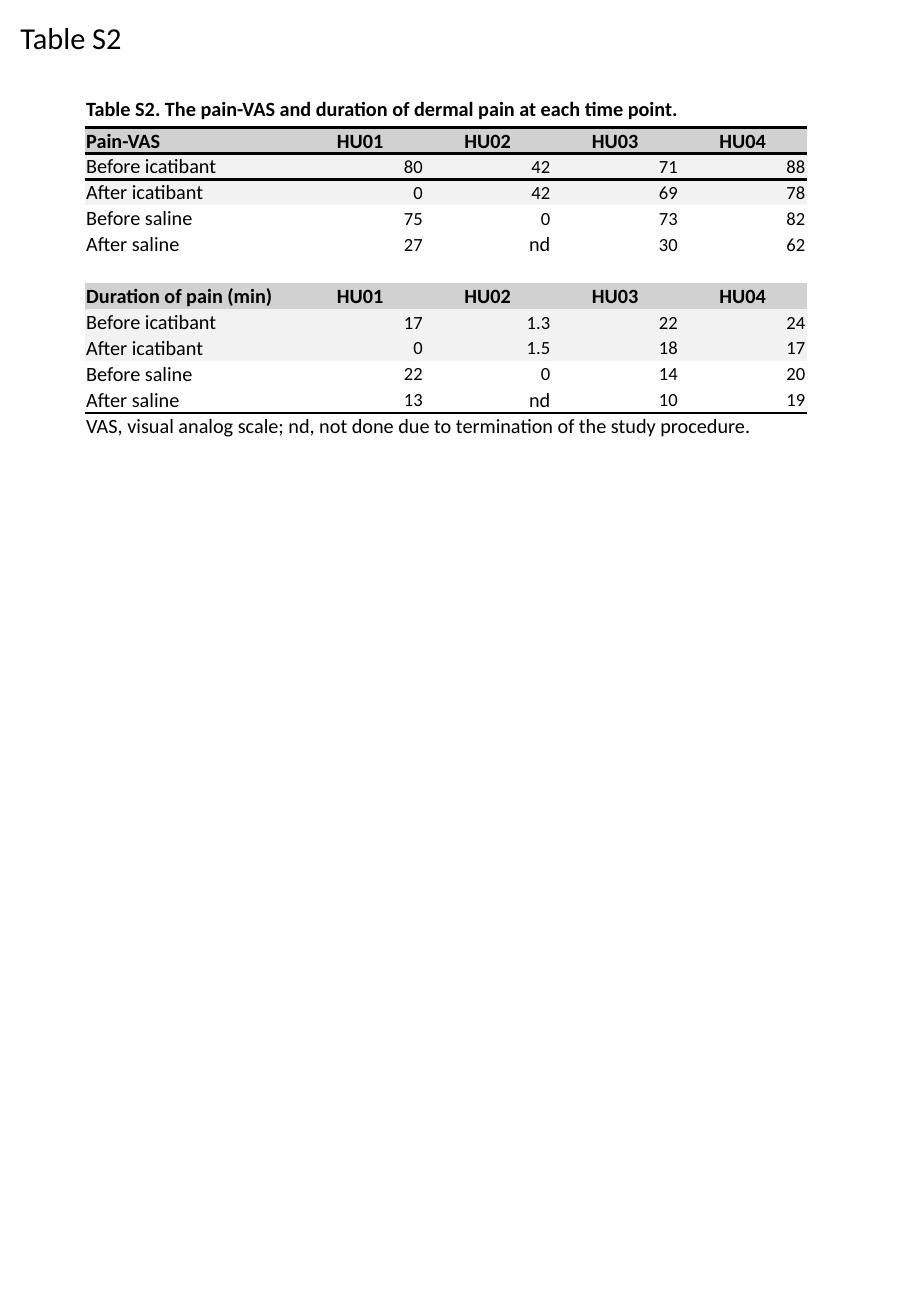
import lxml.etree
import pptx
import pptx.dml.color
import pptx.enum.text
import pptx.oxml.ns
import pptx.util

ALIGN = pptx.enum.text.PP_ALIGN
PLAIN = "{2D5ABB26-0587-4C30-8999-92F81FD0307C}"
HEADS = ["HU01", "HU02", "HU03", "HU04"]
STEPS = ["Before icatibant", "After icatibant", "Before saline", "After saline"]
BLOCKS = {
    "Pain-VAS": ["80 42 71 88", "0 42 69 78", "75 0 73 82", "27 nd 30 62"],
    "Duration of pain (min)": ["17 1.3 22 24", "0 1.5 18 17", "22 0 14 20", "13 nd 10 19"],
}
TITLE = "Table S2. The pain-VAS and duration of dermal pain at each time point."
NOTE = "VAS, visual analog scale; nd, not done due to termination of the study procedure."


def color(text):
    return pptx.dml.color.RGBColor.from_string(text)


def write(frame, text, size=12, bold=False, align=ALIGN.LEFT, ink="000000", face="Calibri"):
    line = frame.paragraphs[0]
    line.alignment = align
    if not text:
        end = lxml.etree.SubElement(line._p, pptx.oxml.ns.qn("a:endParaRPr"))
        end.set("sz", str(size * 100))
        return
    run = line.add_run()
    run.text = text
    run.font.size = pptx.util.Pt(size)
    run.font.bold = bold
    run.font.name = face
    run.font.color.rgb = color(ink)


class Sheet:
    """Slide with a grid of 75 columns by 108.3 rows and its table style."""

    head, band, rule = "D1D1D1", "F2F2F2", "000000"

    def __init__(self, deck):
        self.slide = deck.slides.add_slide(deck.slide_layouts[6])
        self.wide, self.tall = deck.slide_width / 75, deck.slide_height / 108.3

    def cols(self, count):
        return round(count * self.wide)

    def rows(self, count):
        return round(count * self.tall)

    def place(self, left, top, width, height):
        return self.cols(left), self.rows(top), self.cols(width), self.rows(height)

    def label(self, text, box, **style):
        frame = self.slide.shapes.add_textbox(*self.place(*box)).text_frame
        frame.word_wrap = False
        write(frame, text, **style)

    def table(self, left, top, widths, heights):
        box = self.place(left, top, sum(widths), sum(heights))
        grid = self.slide.shapes.add_table(len(heights), len(widths), *box).table
        grid.first_row = grid.horz_banding = False
        grid._tbl.tblPr.find(pptx.oxml.ns.qn("a:tableStyleId")).text = PLAIN
        for col, width in zip(grid.columns, widths):
            col.width = self.cols(width)
        for row, height in zip(grid.rows, heights):
            row.height = self.rows(height)
        return grid

    def cell(self, cell, text, fill=None, **style):
        cell.margin_left = cell.margin_right = self.cols(0.1)
        cell.margin_top, cell.margin_bottom = self.rows(0.1), 0
        cell.vertical_anchor = pptx.enum.text.MSO_ANCHOR.MIDDLE
        if fill:
            cell.fill.solid()
            cell.fill.fore_color.rgb = color(fill)
        else:
            cell.fill.background()
        write(cell.text_frame, text, **style)

    def edge(self, grid, row, width):
        for upper, lower in zip(grid.rows[row].cells, grid.rows[row + 1].cells):
            for cell, side in ((upper, "lnB"), (lower, "lnT")):
                line = lxml.etree.Element(pptx.oxml.ns.qn(f"a:{side}"), w=str(pptx.util.Pt(width)))
                fill = lxml.etree.SubElement(line, pptx.oxml.ns.qn("a:solidFill"))
                lxml.etree.SubElement(fill, pptx.oxml.ns.qn("a:srgbClr"), val=self.rule)
                props = cell._tc.get_or_add_tcPr()
                spot = 1 if side == "lnB" and props.find(pptx.oxml.ns.qn("a:lnT")) is not None else 0
                props.insert(spot, line)

    def block(self, grid, top, name, data):
        for col, text in enumerate([name] + HEADS):
            align = ALIGN.CENTER if col else ALIGN.LEFT
            self.cell(grid.cell(top, col), text, self.head, bold=True, align=align)
        for row, (step, line) in enumerate(zip(STEPS, data)):
            fill = self.band if "icatibant" in step else None
            self.cell(grid.cell(top + row + 1, 0), step, fill)
            for col, text in enumerate(line.split(), 1):
                size = 12 if text == "nd" else 11
                self.cell(grid.cell(top + row + 1, col), text, fill, size=size, align=ALIGN.RIGHT)

    def span(self, grid, row, text="", **style):
        for col, cell in enumerate(grid.rows[row].cells):
            self.cell(cell, "" if col else text, **style)
        if text:
            grid.cell(row, 0).merge(grid.cell(row, len(grid.columns) - 1))


def main():
    deck = pptx.Presentation()
    deck.slide_width, deck.slide_height = pptx.util.Inches(7.5), pptx.util.Inches(10.83)
    sheet = Sheet(deck)
    grid = sheet.table(7, 7.4, [17.4] + [10.5] * 4, [3.1] + [2.13] * 12)
    sheet.span(grid, 0, TITLE, bold=True)
    for top, (name, data) in zip((1, 7), BLOCKS.items()):
        sheet.block(grid, top, name, data)
    sheet.span(grid, 6)
    sheet.span(grid, 12, NOTE)
    for row, width in ((0, 1.5), (1, 1.5), (11, 1)):
        sheet.edge(grid, row, width)
    sheet.label("Table S2", (0.7, 1.1, 10.4, 4), size=18)
    deck.save("out.pptx")


if __name__ == "__main__":
    main()
